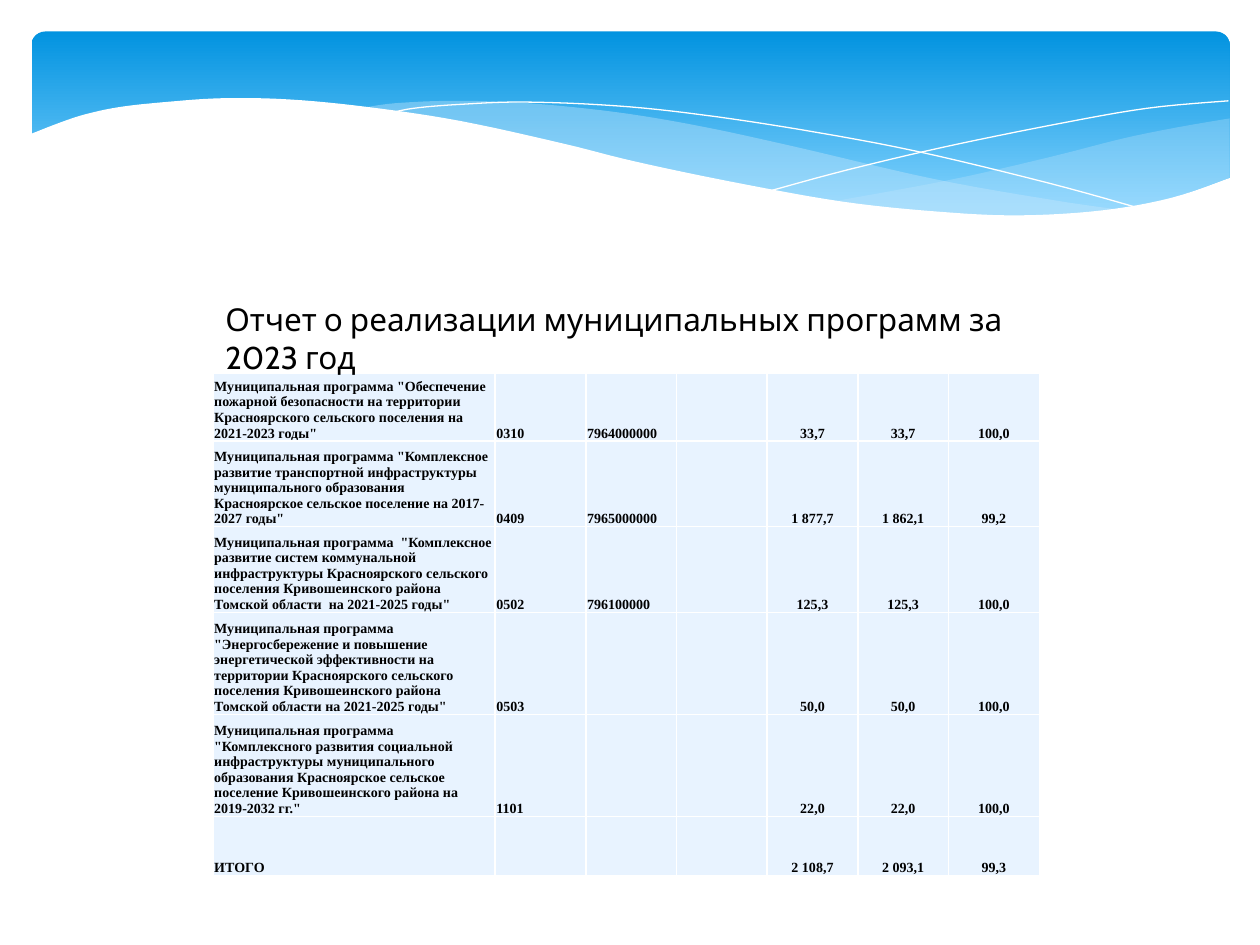
"""Build the slide reporting on municipal programmes for 2023."""
from dataclasses import dataclass

from lxml import etree
from pptx import Presentation
from pptx import util as u
from pptx.dml.color import RGBColor
from pptx.enum import shapes, text
from pptx.oxml.ns import qn

PX = 9144


@dataclass(frozen=True)
class Theme:
    sky_top: str = "0293E0"
    sky_bottom: str = "83D3FE"
    mist: str = "C6E7FC"
    white: str = "FFFFFF"
    cell: str = "E8F3FF"
    ink: str = "000000"
    title_font: str = "Cabin"
    table_font: str = "Times New Roman"
    title_size: int = 18
    table_size: int = 8
    border: int = 1


def color(value):
    return RGBColor.from_string(value)


def emu(*lengths):
    return [u.Emu(round(length * PX)) for length in lengths]


def write_text(frame, content, font, size, ink, bold=False, align=text.PP_ALIGN.LEFT):
    paragraph = frame.paragraphs[0]
    paragraph.alignment = align
    run = paragraph.add_run()
    run.text = content
    run.font.name = font
    run.font.size = u.Pt(size)
    run.font.bold = bold
    run.font.color.rgb = color(ink)


def smooth(knots, steps=6):
    """Return a Catmull-Rom curve through the knots; two knots stay a straight edge."""
    if len(knots) < 3:
        return knots
    padded = [knots[0], *knots, knots[-1]]
    curve = [knots[0]]
    for a, b, c, d in zip(padded, padded[1:], padded[2:], padded[3:]):
        for step in range(1, steps + 1):
            t = step / steps
            curve.append(tuple(
                (2 * q + (r - p) * t + (2 * p - 5 * q + 4 * r - s) * t**2
                 + (3 * q - p - 3 * r + s) * t**3) / 2
                for p, q, r, s in zip(a, b, c, d)))
    return curve


class SlidePainter:
    """Hold the theme and the current slide, and draw each kind of element."""

    def __init__(self, slide, theme):
        self.slide = slide
        self.theme = theme

    def banner(self, left, top, width, height):
        shape = self.slide.shapes.add_shape(
            shapes.MSO_SHAPE.ROUNDED_RECTANGLE, *emu(left, top, width, height))
        shape.shadow.inherit = False
        shape.adjustments[0] = 0.07
        shape.line.fill.background()
        shape.fill.gradient()
        shape.fill.gradient_angle = 270
        stops = ((0, self.theme.sky_top), (0.9, self.theme.sky_bottom))
        for stop, (position, value) in zip(shape.fill.gradient_stops, stops):
            stop.position = position
            stop.color.rgb = color(value)

    def outline(self, edges, close):
        points = [tuple(emu(*point)) for edge in edges for point in smooth(edge)]
        builder = self.slide.shapes.build_freeform(*points[0])
        builder.add_line_segments(points[1:], close=close)
        shape = builder.convert_to_shape()
        shape.shadow.inherit = False
        return shape

    def wave(self, *edges, fill, opacity=100):
        shape = self.outline(edges, close=True)
        shape.line.fill.background()
        shape.fill.solid()
        shape.fill.fore_color.rgb = color(fill)
        if opacity < 100:
            tint = shape.fill._xPr.find(".//" + qn("a:srgbClr"))
            etree.SubElement(tint, qn("a:alpha"), val=str(opacity * 1000))

    def thread(self, knots):
        shape = self.outline([knots], close=False)
        shape.fill.background()
        shape.line.color.rgb = color(self.theme.white)
        shape.line.width = u.Pt(0)

    def title(self, content, left, top, width, height):
        box = self.slide.shapes.add_textbox(*emu(left, top, width, height))
        box.text_frame.word_wrap = True
        write_text(box.text_frame, content, font=self.theme.title_font,
                   size=self.theme.title_size, ink=self.theme.ink)

    def table(self, rows, left, top, widths, heights):
        frame = self.slide.shapes.add_table(
            len(rows), len(widths), *emu(left, top, sum(widths), sum(heights)))
        table = frame.table
        table.first_row = table.horz_banding = False
        for column, width in zip(table.columns, emu(*widths)):
            column.width = width
        for row, height, values in zip(table.rows, emu(*heights), rows):
            row.height = height
            for index, (cell, value) in enumerate(zip(row.cells, values)):
                self.cell(cell, value, centred=index > 3)

    def cell(self, cell, value, centred):
        cell.fill.solid()
        cell.fill.fore_color.rgb = color(self.theme.cell)
        cell.vertical_anchor = text.MSO_ANCHOR.BOTTOM
        cell.margin_left = cell.margin_right = cell.margin_top = u.Emu(PX)
        cell.margin_bottom = 0
        properties = cell._tc.get_or_add_tcPr()
        for index, side in enumerate(("lnL", "lnR", "lnT", "lnB")):
            line = etree.Element(qn("a:" + side), w=str(u.Pt(self.theme.border)))
            fill = etree.SubElement(line, qn("a:solidFill"))
            etree.SubElement(fill, qn("a:srgbClr"), val=self.theme.white)
            properties.insert(index, line)
        if value:
            write_text(cell.text_frame, value, font=self.theme.table_font,
                       size=self.theme.table_size, ink=self.theme.ink, bold=True,
                       align=text.PP_ALIGN.CENTER if centred else text.PP_ALIGN.LEFT)


PROGRAMS = [
    ('Муниципальная программа "Обеспечение пожарной безопасности на территории  '
     'Красноярского сельского поселения на 2021-2023 годы"',
     "0310", "7964000000", "", "33,7", "33,7", "100,0"),
    ('Муниципальная программа "Комплексное развитие транспортной инфраструктуры '
     'муниципального образования Красноярское сельское поселение на 2017-2027 годы"',
     "0409", "7965000000", "", "1 877,7", "1 862,1", "99,2"),
    ('Муниципальная программа  "Комплексное развитие систем коммунальной '
     'инфраструктуры Красноярского сельского поселения Кривошеинского района '
     'Томской области  на 2021-2025 годы"',
     "0502", "796100000", "", "125,3", "125,3", "100,0"),
    ('Муниципальная программа "Энергосбережение и повышение энергетической '
     'эффективности на территории Красноярского сельского поселения '
     'Кривошеинского района Томской области на 2021-2025 годы"',
     "0503", "", "", "50,0", "50,0", "100,0"),
    ('Муниципальная программа "Комплексного развития социальной инфраструктуры '
     'муниципального образования Красноярское сельское поселение '
     'Кривошеинского района на 2019-2032 гг."',
     "1101", "", "", "22,0", "22,0", "100,0"),
    ("ИТОГО", "", "", "", "2 108,7", "2 093,1", "99,3"),
]


def main():
    presentation = Presentation()
    presentation.slide_width, presentation.slide_height = emu(1000, 750)
    theme = Theme()
    painter = SlidePainter(
        presentation.slides.add_slide(presentation.slide_layouts[6]), theme)

    painter.banner(25, 25, 951, 156)
    painter.wave(
        [(976, 94), (935, 101), (891, 110), (832, 125), (753, 143), (661, 160)],
        [(661, 160), (719, 167), (769, 171), (824, 172), (872, 169), (921, 160), (976, 141)],
        fill=theme.mist, opacity=29)
    painter.wave(
        [(893, 167), (837, 159), (741, 142), (629, 116), (555, 100), (489, 89),
         (420, 82), (361, 80), (313, 82), (286, 86)],
        [(286, 86), (342, 94), (404, 106), (491, 126), (584, 146), (665, 161),
         (736, 169), (796, 173), (848, 172), (893, 167)],
        fill=theme.mist, opacity=40)
    painter.thread([(309, 90), (328, 86), (363, 83), (416, 81), (489, 84), (556, 91),
                    (636, 103), (727, 120), (831, 145), (907, 166)])
    painter.thread([(613, 151), (672, 135), (748, 117), (836, 99), (910, 86), (975, 80)])
    painter.wave(
        [(977, 141), (930, 157), (875, 167), (809, 171), (744, 168), (668, 160),
         (579, 144), (503, 128), (447, 114), (365, 96), (292, 85), (230, 79),
         (177, 78), (132, 81), (95, 85), (67, 91), (46, 98), (23, 107)],
        [(23, 224), (977, 224)],
        fill=theme.white)
    painter.table(PROGRAMS, 169, 296, widths=[224] + [72] * 6,
                  heights=[54, 68, 68, 81, 81, 47])
    painter.title("Отчет о реализации муниципальных программ за 2023 год",
                  169, 233, 677, 40)
    presentation.save("out.pptx")


if __name__ == "__main__":
    main()
